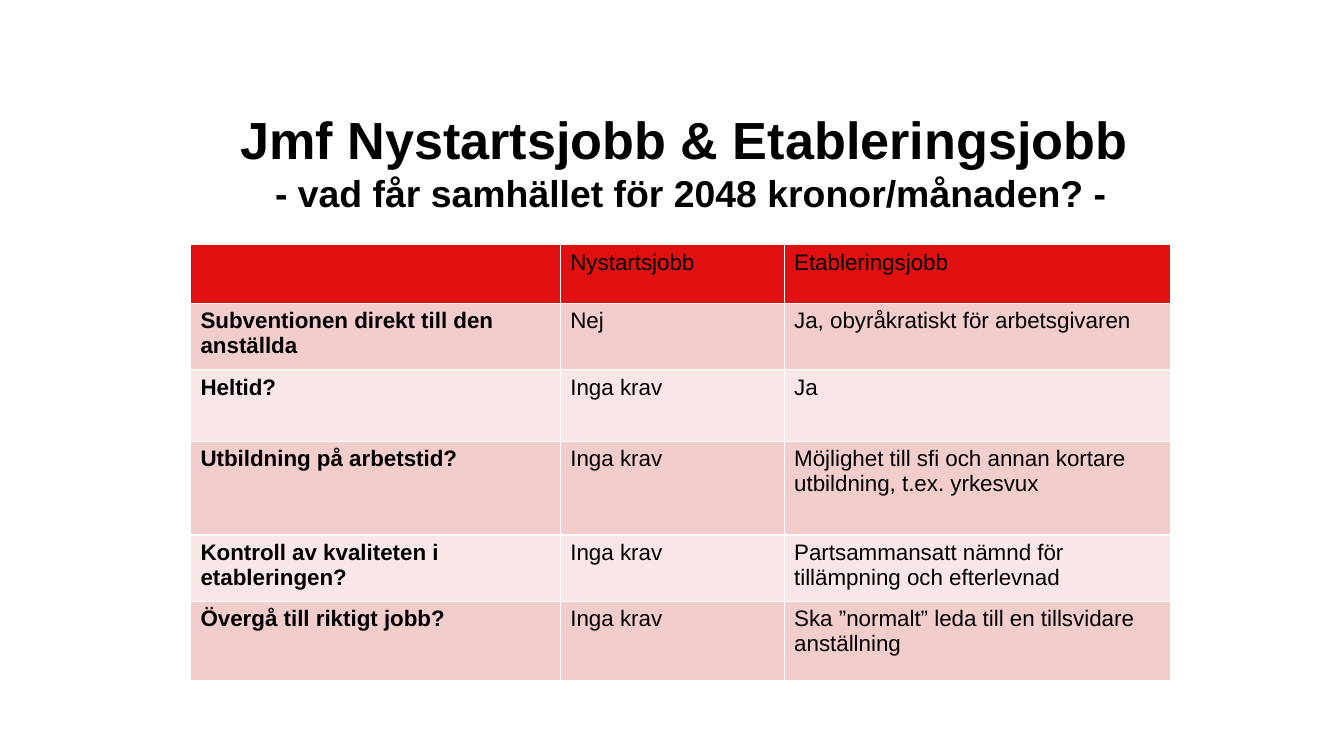
"""Build a slide comparing Nystartsjobb and Etableringsjobb in a table."""
import pptx
import pptx.util
import pptx.dml.color
import pptx.enum.text

Cm = pptx.util.Cm


def paint(part, shade):
    part.solid()
    part.fore_color.rgb = pptx.dml.color.RGBColor.from_string(shade)


def style(run, size, bold):
    run.font.name = "Arial"
    run.font.size = pptx.util.Pt(size)
    run.font.bold = bold
    paint(run.font.fill, "000000")


deck = pptx.Presentation()
deck.slide_width = Cm(33.87)
deck.slide_height = Cm(19.05)
slide = deck.slides.add_slide(deck.slide_layouts[5])

title = slide.shapes.title
title.left, title.top = Cm(4.42), Cm(1.93)
title.width, title.height = Cm(26.01), Cm(3.61)
frame = title.text_frame
frame.word_wrap = True
frame.auto_size = pptx.enum.text.MSO_AUTO_SIZE.NONE
frame.vertical_anchor = pptx.enum.text.MSO_ANCHOR.BOTTOM
head = frame.paragraphs[0]
head.text = "Jmf Nystartsjobb & Etableringsjobb \v- vad får samhället för 2048 kronor/månaden? -"
head.alignment = pptx.enum.text.PP_ALIGN.CENTER
for run, size in zip(head.runs, (37.3, 26.7)):
    style(run, size, True)

rows = [
    ("", "Nystartsjobb", "Etableringsjobb"),
    ("Subventionen direkt till den anställda", "Nej", "Ja, obyråkratiskt för arbetsgivaren"),
    ("Heltid?", "Inga krav", "Ja"),
    ("Utbildning på arbetstid?", "Inga krav",
     "Möjlighet till sfi och annan kortare utbildning, t.ex. yrkesvux"),
    ("Kontroll av kvaliteten i etableringen?", "Inga krav",
     "Partsammansatt nämnd för tillämpning och efterlevnad"),
    ("Övergå till riktigt jobb?", "Inga krav",
     "Ska ”normalt” leda till en tillsvidare anställning"),
]
widths = (9.32, 5.64, 9.73)
heights = (1.47, 1.68, 1.8, 2.36, 1.68, 1.98)
bands = ("F9E7E7", "F3CCCC")

table = slide.shapes.add_table(
    len(rows), len(widths), Cm(4.8), Cm(6.17), Cm(sum(widths)), Cm(sum(heights))
).table
for column, width in zip(table.columns, widths):
    column.width = Cm(width)
for r, (texts, height) in enumerate(zip(rows, heights)):
    table.rows[r].height = Cm(height)
    for c, text in enumerate(texts):
        cell = table.cell(r, c)
        paint(cell.fill, bands[r % 2] if r else "DF100F")
        cell.text_frame.text = text
        for run in cell.text_frame.paragraphs[0].runs:
            style(run, 16, c == 0)

deck.save("out.pptx")
